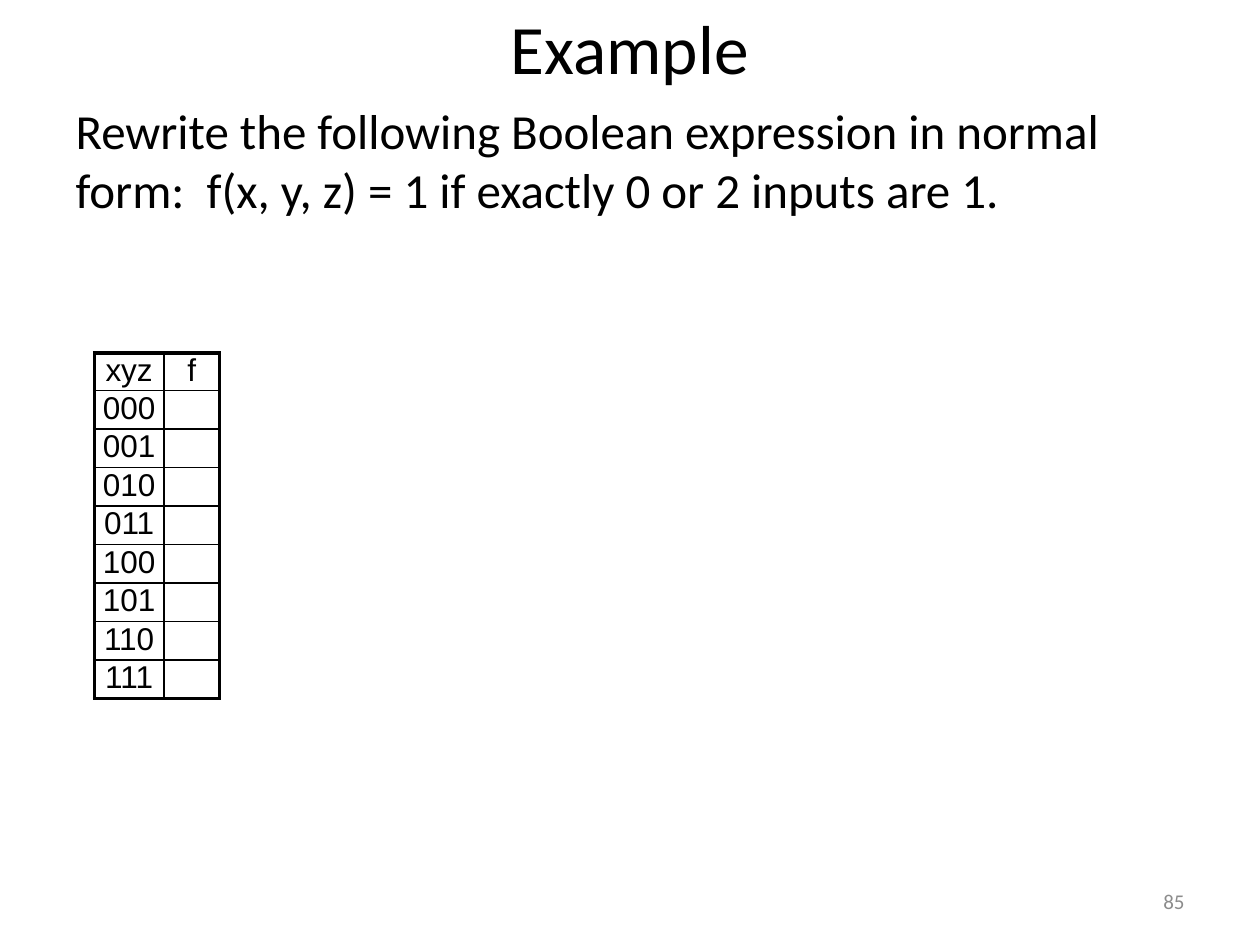
from lxml import etree
from pptx import Presentation
from pptx.dml.color import RGBColor
from pptx.enum import text as t
from pptx.oxml import ns
from pptx.util import Pt

INK = RGBColor(0, 0, 0)
GREY = RGBColor(0x8C, 0x8C, 0x8C)
THEME = {
    "title": {"name": "Calibri", "size": Pt(39.6), "color": INK},
    "body": {"name": "Calibri", "size": Pt(28), "color": INK},
    "number": {"name": "Calibri", "size": Pt(12), "color": GREY},
    "cell": {"name": "Arial", "size": Pt(18), "color": INK},
    "thin": 1,
    "thick": 2.25,
}
MID, TOP = t.MSO_ANCHOR.MIDDLE, t.MSO_ANCHOR.TOP
LEFT, MIDDLE, RIGHT = t.PP_ALIGN.LEFT, t.PP_ALIGN.CENTER, t.PP_ALIGN.RIGHT


def write(frame, words, style, align):
    frame.text = words
    para = frame.paragraphs[0]
    para.alignment = align
    para.space_before = Pt(0)
    for run in para.runs:
        for key, value in THEME[style].items():
            if key == "color":
                run.font.color.rgb = value
            else:
                setattr(run.font, key, value)
    return para


def place(shape, box, words, style, align, anchor):
    for key, value in zip(("left", "top", "width", "height"), box):
        setattr(shape, key, Pt(value))
    frame = shape.text_frame
    format = {"word_wrap": True, "auto_size": t.MSO_AUTO_SIZE.NONE,
              "vertical_anchor": anchor}
    for key, value in format.items():
        setattr(frame, key, value)
    return write(frame, words, style, align)


def plain(para):
    """Remove the bullet and its indent."""
    props = para._p.get_or_add_pPr()
    props.set("marL", "0")
    props.set("indent", "0")
    etree.SubElement(props, ns.qn("a:buNone"))


def edge(cell, side, width):
    line = etree.SubElement(cell._tc.get_or_add_tcPr(), ns.qn(f"a:ln{side}"),
                            w=str(Pt(width)))
    fill = etree.SubElement(line, ns.qn("a:solidFill"))
    etree.SubElement(fill, ns.qn("a:srgbClr"), val=str(INK))


def truth(slide, box, widths, rows):
    """Draw a truth table with a thick frame and thin inner lines."""
    left, top, width, height = map(Pt, box)
    count, cols = len(rows), len(widths)
    table = slide.shapes.add_table(count, cols, left, top, width, height).table
    table.first_row = table.horz_banding = False
    for col, size in zip(table.columns, widths):
        col.width = Pt(size)
    for r, row in enumerate(rows):
        table.rows[r].height = Pt(box[3] / count)
        for c, words in enumerate(row):
            cell = table.cell(r, c)
            for side in ("left", "right", "top", "bottom"):
                setattr(cell, f"margin_{side}", 0)
            outer = {"L": c == 0, "R": c == cols - 1,
                     "T": r == 0, "B": r == count - 1}
            for side, thick in outer.items():
                edge(cell, side, THEME["thick" if thick else "thin"])
            cell.fill.background()
            write(cell.text_frame, words, "cell", MIDDLE)


def main():
    deck = Presentation()
    deck.slide_width, deck.slide_height = Pt(720), Pt(540)
    slide = deck.slides.add_slide(deck.slide_layouts[1])
    title, body = slide.placeholders
    place(title, (36, 0, 648, 54), "Example", "title", MIDDLE, MID)
    task = ("Rewrite the following Boolean expression in normal form:  "
            "f(x, y, z) = 1 if exactly 0 or 2 inputs are 1.")
    plain(place(body, (36, 54, 648, 428.4), task, "body", LEFT, TOP))
    number = slide.shapes.add_textbox(0, 0, 0, 0)
    place(number, (516, 500.4, 168, 28.8), "85", "number", RIGHT, MID)
    rows = [("xyz", "f")] + [(f"{n:03b}", "") for n in range(8)]
    truth(slide, (54, 201.6, 71.4, 194.4), (39.6, 31.8), rows)
    deck.save("out.pptx")


if __name__ == "__main__":
    main()
